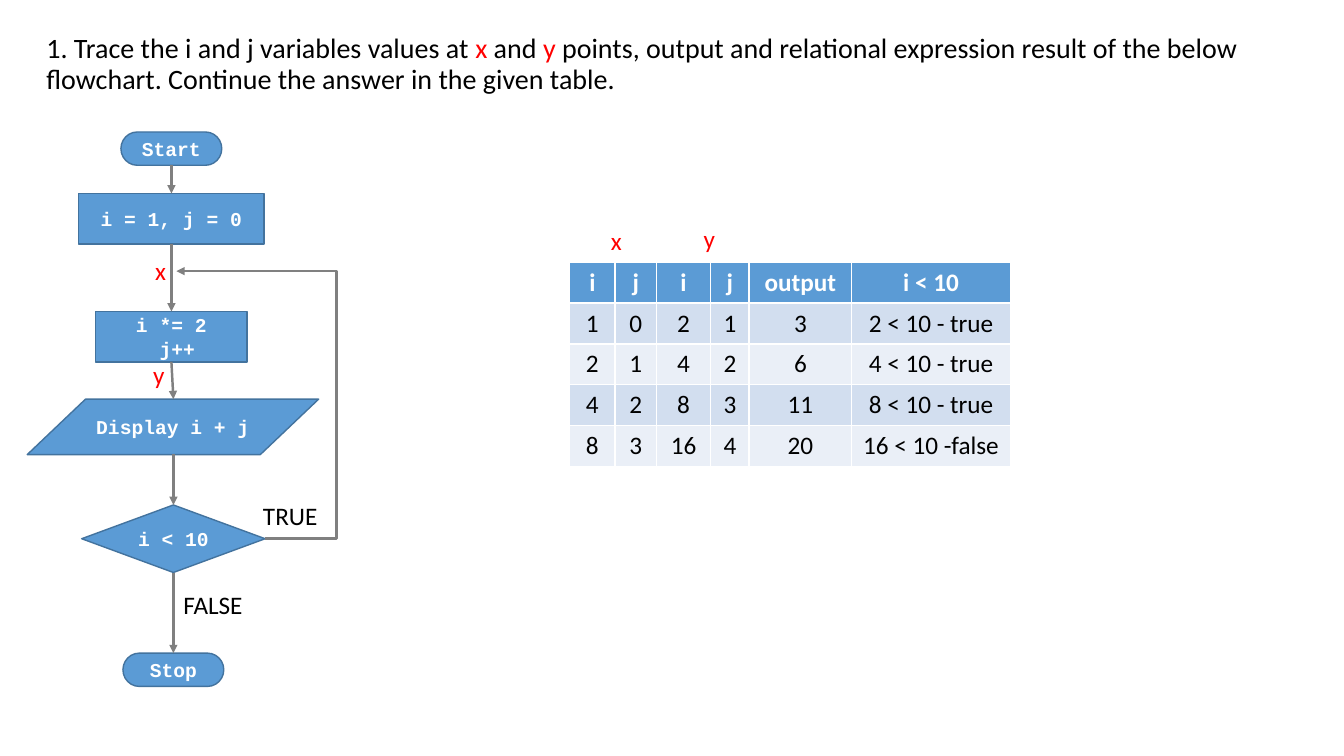
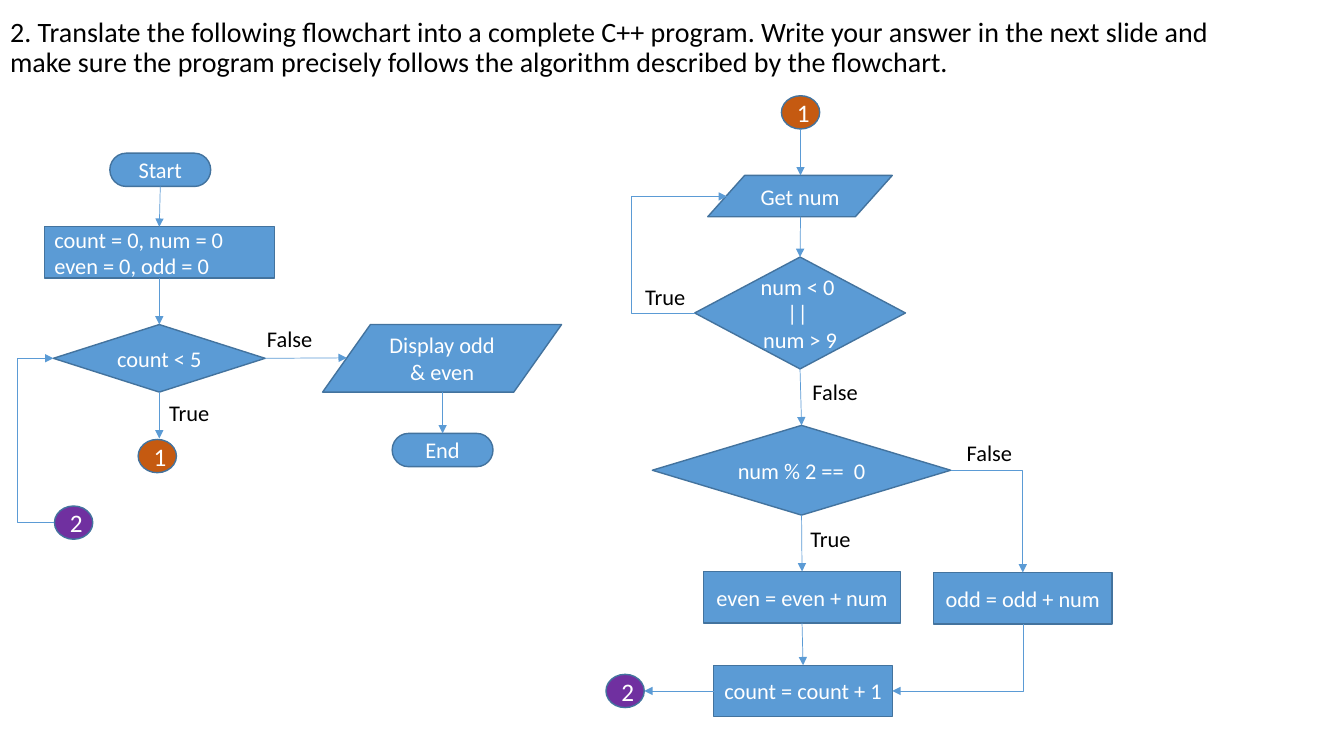
import pptx
import pptx.util
import pptx.dml.color
import pptx.enum.shapes
import pptx.enum.text
import pptx.oxml.ns
import lxml.etree

Inches = pptx.util.Inches
Pt = pptx.util.Pt
qn = pptx.oxml.ns.qn
ALIGN = pptx.enum.text.PP_ALIGN
MIDDLE = pptx.enum.text.MSO_ANCHOR.MIDDLE
KIND = pptx.enum.shapes.MSO_SHAPE
WIRE = pptx.enum.shapes.MSO_CONNECTOR

COLORS = {
    "blue": "5B9BD5", "edge": "43739E", "gray": "808080", "orange": "C55A11",
    "purple": "7030A0", "red": "FF0000", "black": "000000", "white": "FFFFFF",
    "dark": "D2DEEF", "light": "EAEFF7",
}
RGB = {name: pptx.dml.color.RGBColor.from_string(code) for name, code in COLORS.items()}
STEP, TEST = KIND.FLOWCHART_PROCESS, KIND.FLOWCHART_DECISION
CAP, DATA, DOT = KIND.FLOWCHART_TERMINATOR, KIND.FLOWCHART_DATA, KIND.OVAL
TOP, LEFT, BOTTOM, RIGHT = range(4)


def style(frame, size, color, font="Calibri", bold=False, align=ALIGN.LEFT):
    for para in frame.paragraphs:
        para.alignment = align
        for run in para.runs:
            run.font.name, run.font.size, run.font.bold = font, Pt(size), bold
            run.font.color.rgb = RGB[color]


def link(slide, boxes, start, end, color, width, bend=None, tip="tailEnd"):
    """Join two ends, each (box, side) or (x, y); bend is a middle x or "corner"."""
    kind = WIRE.STRAIGHT if bend is None else WIRE.ELBOW
    spots = [(0, 0) if isinstance(spot[0], str) else spot for spot in (start, end)]
    wire = slide.shapes.add_connector(kind, *[Inches(n) for spot in spots for n in spot])
    props = wire._element.nvCxnSpPr.cNvCxnSpPr
    for spot, join, tag in ((start, wire.begin_connect, "a:stCxn"),
                            (end, wire.end_connect, "a:endCxn")):
        if isinstance(spot[0], str):
            box = boxes[spot[0]]
            join(box, spot[1])
            if box.auto_shape_type == DOT:  # an oval has eight joints, not four
                props.find(qn(tag)).set("idx", str(spot[1] * 2))
    wire.line.color.rgb, wire.line.width = RGB[color], Pt(width)
    lxml.etree.SubElement(wire.line._ln, qn("a:" + tip), type="triangle")
    form = wire._element.spPr
    lxml.etree.SubElement(form, qn("a:effectLst"))
    shape = form.find(qn("a:prstGeom"))
    if bend == "corner":
        shape.set("prst", "bentConnector2")
    elif bend is not None:
        share = (Inches(bend) - wire.begin_x) / (wire.end_x - wire.begin_x)
        lxml.etree.SubElement(shape.find(qn("a:avLst")), qn("a:gd"),
                              name="adj1", fmla=f"val {round(share * 100000)}")


PAGES = [
    {
        "title": [("1. Trace the i and j variables values at ", "black"), ("x", "red"),
                  (" and ", "black"), ("y", "red"),
                  (" points, output and relational expression result of the below "
                   "flowchart. Continue the answer in the given table.", "black")],
        "place": (0.36, 0.09, 12.42, 1.11),
        "font": ("Courier New", 14, True),
        "wire": ("gray", 1.75),
        "boxes": {
            "show": (DATA, 0.27, 3.96, 2.89, 0.55, "Display i + j"),
            "test": (TEST, 0.81, 5.01, 1.82, 0.67, "i < 10"),
            "start": (CAP, 1.2, 1.31, 1, 0.33, "Start"),
            "stop": (CAP, 1.22, 6.48, 1, 0.33, "Stop"),
            "init": (STEP, 0.78, 1.92, 1.84, 0.5, "i = 1, j = 0"),
            "step": (STEP, 0.95, 3.09, 1.5, 0.5, "i *= 2\n j++"),
        },
        "links": [
            (("start", BOTTOM), ("init", TOP)),
            (("init", BOTTOM), ("step", TOP)),
            (("step", BOTTOM), (1.72, 3.96)),
            ((1.72, 4.5), ("test", TOP)),
            (("test", BOTTOM), ("stop", TOP)),
            (("test", RIGHT), (1.75, 2.69), 3.34),
        ],
        "size": 18,
        "labels": [
            ("TRUE", 2.51, 4.91, 0.75, "black"), ("FALSE", 1.72, 5.8, 0.79, "black"),
            ("x", 1.44, 2.48, 0.31, "red"), ("y", 1.42, 3.52, 0.31, "red"),
            ("x", 5.96, 2.19, 0.31, "red"), ("y", 6.88, 2.17, 0.31, "red"),
        ],
    },
    {
        "title": [("2. Translate the following flowchart into a complete C++ program. "
                   "Write your answer in the next slide and make sure the program "
                   "precisely follows the algorithm described by the flowchart.", "black")],
        "place": (0, 0.01, 12.71, 0.94),
        "font": ("Calibri", 16, False),
        "wire": ("blue", 0.5),
        "boxes": {
            "start": (CAP, 1.09, 1.52, 1, 0.33, "Start"),
            "init": (STEP, 0.44, 2.25, 2.28, 0.51, "count = 0, num = 0\neven = 0, odd = 0"),
            "loop": (TEST, 0.53, 3.22, 2.1, 0.67, "count < 5"),
            "show": (DATA, 3.2, 3.22, 2.37, 0.67, "Display odd & even"),
            "end": (CAP, 3.89, 4.3, 1, 0.33, "End"),
            "get": (DATA, 7.02, 1.74, 1.83, 0.41, "Get num"),
            "range": (TEST, 6.89, 2.55, 2.09, 1.11, "num < 0 \n|| \nnum > 9"),
            "parity": (TEST, 6.47, 4.22, 2.96, 0.89, "num % 2 ==  0"),
            "even": (STEP, 6.98, 5.67, 1.95, 0.51, "even = even + num"),
            "odd": (STEP, 9.26, 5.68, 1.77, 0.51, "odd = odd + num"),
            "count": (STEP, 7.08, 6.6, 1.77, 0.51, "count = count + 1"),
            "one out": (DOT, 1.37, 4.36, 0.38, 0.33, "1"),
            "one in": (DOT, 7.75, 0.95, 0.38, 0.33, "1"),
            "two out": (DOT, 6.01, 6.69, 0.38, 0.33, "2"),
            "two in": (DOT, 0.54, 5.02, 0.38, 0.33, "2"),
        },
        "links": [
            (("start", BOTTOM), ("init", TOP)),
            (("init", BOTTOM), ("loop", TOP)),
            (("loop", BOTTOM), (1.58, 4.35)),
            (("loop", RIGHT), (3.44, 3.55)),
            ((4.39, 3.89), ("end", TOP)),
            (("two in", LEFT), ("loop", LEFT), 0.17),
            (("one in", BOTTOM), (7.94, 1.74)),
            ((7.94, 2.15), ("range", TOP)),
            (("range", LEFT), (7.21, 1.95), 6.26),
            (("range", BOTTOM), ("parity", TOP)),
            (("parity", BOTTOM), ("even", TOP)),
            (("parity", RIGHT), ("odd", TOP), "corner"),
            (("even", BOTTOM), ("count", TOP)),
            (("count", RIGHT), ("odd", BOTTOM), "corner", "headEnd"),
            (("count", LEFT), ("two out", RIGHT)),
        ],
        "size": 16,
        "labels": [
            ("True", 7.94, 5.16, 0.61, "black"), ("False", 2.55, 3.18, 0.66, "black"),
            ("True", 1.58, 3.91, 0.61, "black"), ("True", 6.3, 2.76, 0.61, "black"),
            ("False", 9.49, 4.31, 0.66, "black"), ("False", 7.96, 3.7, 0.66, "black"),
        ],
    },
]
TRACE = [
    ("i", "j", "i", "j", "output", "i < 10"),
    ("1", "0", "2", "1", "3", "2 < 10 - true"),
    ("2", "1", "4", "2", "6", "4 < 10 - true"),
    ("4", "2", "8", "3", "11", "8 < 10 - true"),
    ("8", "3", "16", "4", "20", "16 < 10 -false"),
]
WIDTHS = (0.45, 0.41, 0.54, 0.38, 1.02, 1.57)

deck = pptx.Presentation()
deck.slide_width, deck.slide_height = Inches(13.33), Inches(7.5)

for page in PAGES:
    slide = deck.slides.add_slide(deck.slide_layouts[5])
    title = slide.shapes.title
    title.left, title.top, title.width, title.height = [Inches(n) for n in page["place"]]
    frame = title.text_frame
    frame.word_wrap, frame.vertical_anchor = True, MIDDLE
    frame.auto_size = pptx.enum.text.MSO_AUTO_SIZE.NONE
    para = frame.paragraphs[0]
    para.line_spacing = 0.9
    for text, _ in page["title"]:
        para.add_run().text = text
    style(frame, 20, "black")
    for run, (_, color) in zip(para.runs, page["title"]):
        run.font.color.rgb = RGB[color]

    font, size, bold = page["font"]
    boxes = {}
    for name, (kind, *place, text) in page["boxes"].items():
        box = slide.shapes.add_shape(kind, *[Inches(n) for n in place])
        box.shadow.inherit = False
        fill = "blue" if kind != DOT else "orange" if text == "1" else "purple"
        box.fill.solid()
        box.fill.fore_color.rgb = RGB[fill]
        box.line.color.rgb, box.line.width = RGB["edge"], Pt(1)
        frame = box.text_frame
        frame.text, frame.word_wrap, frame.vertical_anchor = text, True, MIDDLE
        align = ALIGN.LEFT if text.startswith("count = 0") else ALIGN.CENTER
        style(frame, 18 if kind == DOT else size, "white", font, bold, align)
        boxes[name] = box

    for start, end, *bend in page["links"]:
        link(slide, boxes, start, end, *page["wire"], *bend)

    for text, left, top, width, color in page["labels"]:
        label = slide.shapes.add_textbox(Inches(left), Inches(top), Inches(width), Inches(0.4))
        label.text_frame.text, label.text_frame.word_wrap = text, False
        style(label.text_frame, page["size"], color)

grid = deck.slides[0].shapes.add_table(
    len(TRACE), len(WIDTHS), Inches(5.65), Inches(2.6), Inches(sum(WIDTHS)), Inches(2.03)).table
for column, width in zip(grid.columns, WIDTHS):
    column.width = Inches(width)
for row, texts in enumerate(TRACE):
    fill = "blue" if row == 0 else "dark" if row % 2 else "light"
    for col, text in enumerate(texts):
        cell = grid.cell(row, col)
        cell.fill.solid()
        cell.fill.fore_color.rgb = RGB[fill]
        cell.text_frame.text = text
        style(cell.text_frame, 18, "black" if row else "white", bold=row == 0,
              align=ALIGN.CENTER)

deck.save("out.pptx")
